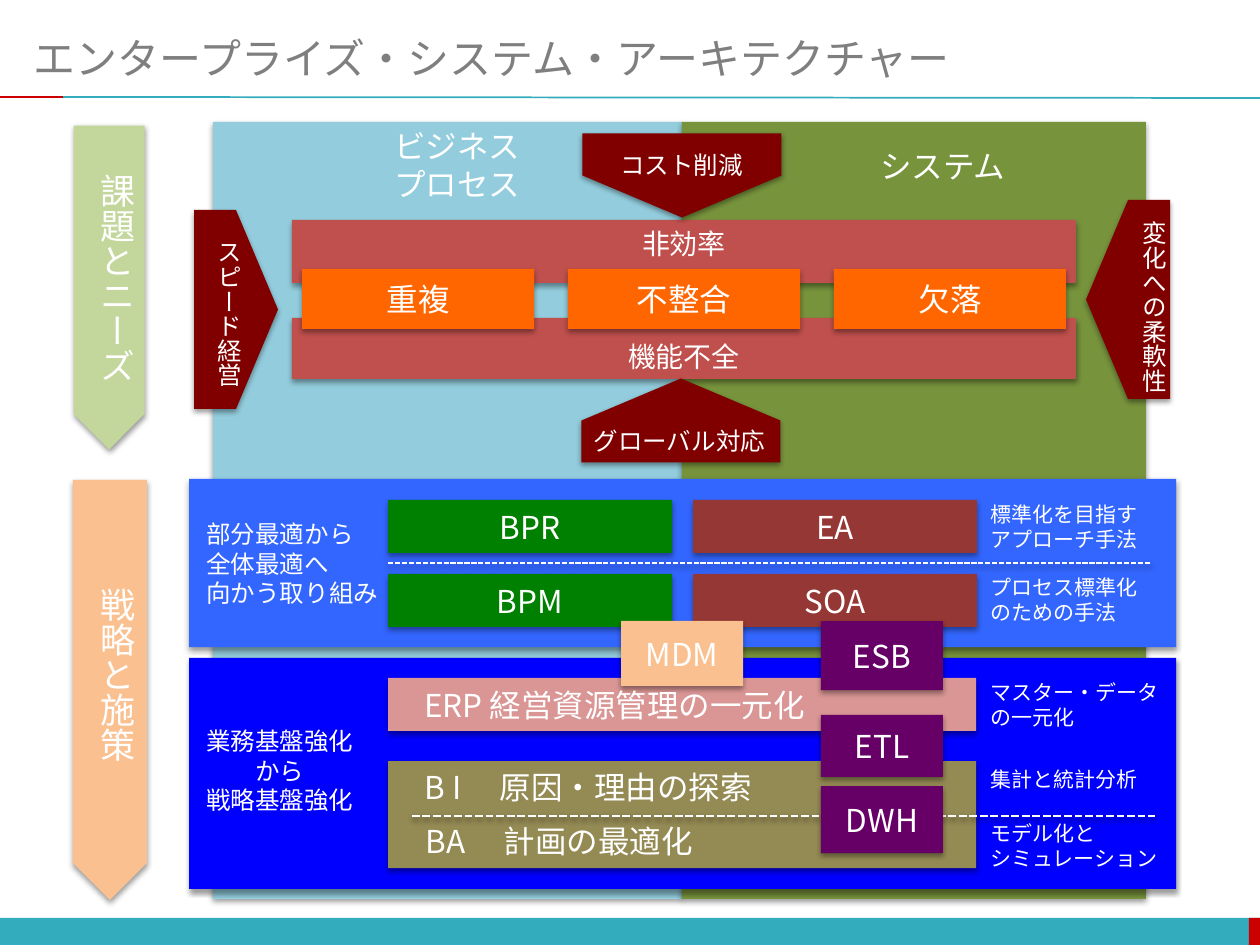
from pptx import Presentation
from pptx.dml.color import RGBColor
from pptx.enum.dml import MSO_LINE
from pptx.enum.shapes import MSO_CONNECTOR, MSO_SHAPE
from pptx.enum.text import MSO_ANCHOR, MSO_AUTO_SIZE, PP_ALIGN
from pptx.oxml import parse_xml
from pptx.oxml.ns import nsdecls, qn
from pptx.util import Pt

PX = 914400 / 126
FONT = "Noto Sans CJK JP"

RECT = MSO_SHAPE.RECTANGLE
BLOCK = MSO_SHAPE.ROUNDED_RECTANGLE
ARROW = MSO_SHAPE.PENTAGON
STRAIGHT = MSO_CONNECTOR.STRAIGHT
DASH = MSO_LINE.SQUARE_DOT
TOP, MIDDLE, BOTTOM = MSO_ANCHOR.TOP, MSO_ANCHOR.MIDDLE, MSO_ANCHOR.BOTTOM
LEFT, CENTER = PP_ALIGN.LEFT, PP_ALIGN.CENTER
FIT_SHAPE = MSO_AUTO_SIZE.SHAPE_TO_FIT_TEXT

WHITE = RGBColor(0xFF, 0xFF, 0xFF)
GRAY = RGBColor(0x7F, 0x7F, 0x7F)
TEAL = RGBColor(0x33, 0xAC, 0xBD)
RED = RGBColor(0xCC, 0x00, 0x00)
SKY = RGBColor(0x93, 0xCD, 0xDD)
OLIVE = RGBColor(0x77, 0x93, 0x3C)
AZURE = RGBColor(0x33, 0x66, 0xFF)
BLUE = RGBColor(0x00, 0x00, 0xFF)
GREEN = RGBColor(0x00, 0x80, 0x00)
BRICK = RGBColor(0x95, 0x37, 0x35)
PINK = RGBColor(0xD9, 0x96, 0x94)
KHAKI = RGBColor(0x94, 0x8A, 0x54)
PURPLE = RGBColor(0x66, 0x00, 0x66)
PEACH = RGBColor(0xFA, 0xC0, 0x90)
CORAL = RGBColor(0xC0, 0x50, 0x4D)
ORANGE = RGBColor(0xFF, 0x66, 0x00)
MAROON = RGBColor(0x80, 0x00, 0x00)
LIME = RGBColor(0xC3, 0xD6, 0x9B)

SHADOW = (
    f'<a:outerShdw {nsdecls("a")} blurRad="40000" dist="20000" dir="5400000" rotWithShape="0">'
    '<a:srgbClr val="000000"><a:alpha val="38000"/></a:srgbClr></a:outerShdw>'
)


def write_text(shape, lines, size, alignment):
    frame = shape.text_frame
    for index, line in enumerate(lines):
        paragraph = frame.add_paragraph() if index else frame.paragraphs[0]
        paragraph.alignment = alignment
        run = paragraph.add_run()
        run.text = line
        run.font.size = Pt(size)
        run.font.name = FONT
        run.font.color.rgb = WHITE
        east_asian = parse_xml(f'<a:ea {nsdecls("a")} typeface="{FONT}"/>')
        run.font._element.find(qn("a:latin")).addnext(east_asian)


def add_block(kind, box, color, text="", size=18, anchor=MIDDLE, shadow=True):
    shape = slide.shapes.add_shape(kind, *[round(value * PX) for value in box])
    shape.fill.solid()
    shape.fill.fore_color.rgb = color
    shape.line.fill.background()
    shape.shadow.inherit = False
    if shadow:
        shape._element.spPr.find(qn("a:effectLst")).append(parse_xml(SHADOW))
    if kind == BLOCK:
        shape.adjustments[0] = 0
    if text:
        shape.text_frame.vertical_anchor = anchor
        write_text(shape, [text], size, CENTER)
    return shape


presentation = Presentation()
presentation.slide_width = round(1260 * PX)
presentation.slide_height = round(945 * PX)
slide = presentation.slides.add_slide(presentation.slide_layouts[5])

title = slide.shapes.title
title.left, title.top, title.width, title.height = [
    round(value * PX) for value in (21, 21, 1218, 73)
]
title.text_frame.vertical_anchor = MIDDLE
paragraph = title.text_frame.paragraphs[0]
paragraph.alignment = LEFT
run = paragraph.add_run()
run.text = "エンタープライズ・システム・アーキテクチャー"
run.font.size = Pt(24)
run.font.name = "Calibri"
run.font.color.rgb = GRAY

add_block(RECT, (0, 918, 1260, 27), TEAL, shadow=False)
add_block(RECT, (1249, 918, 11, 27), RED, shadow=False)

for box, color in [
    ((213, 122, 469, 777), SKY),
    ((682, 122, 464, 777), OLIVE),
    ((189, 479, 987, 168), AZURE),
    ((189, 658, 987, 231), BLUE),
    ((388, 678, 588, 53), PINK),
    ((388, 761, 588, 107), KHAKI),
]:
    add_block(BLOCK, box, color)

for row, names in enumerate([("BPR", "EA"), ("BPM", "SOA")]):
    for column, (name, color) in enumerate(zip(names, (GREEN, BRICK))):
        add_block(BLOCK, (388 + 305 * column, 500 + 74 * row, 284, 53), color, name)

for start, end, color, width, dashed in [
    ((63, 97), (1260, 98), TEAL, 1, False),
    ((0, 97), (63, 97), RED, 1, False),
    ((388, 563), (1150, 563), WHITE, 1, True),
    ((412, 816), (1155, 816), WHITE, 1.5, True),
]:
    line = slide.shapes.add_connector(
        STRAIGHT, *[round(value * PX) for value in start + end]
    )
    line.line.color.rgb = color
    line.line.width = Pt(width)
    effects = parse_xml(f'<a:effectLst {nsdecls("a")}/>')
    if dashed:
        line.line.dash_style = DASH
        effects.append(parse_xml(SHADOW))
    line._element.spPr.append(effects)

for box, color, name in [
    ((821, 715, 122, 62), PURPLE, "ETL"),
    ((621, 621, 122, 65), PEACH, "MDM"),
    ((821, 621, 122, 69), PURPLE, "ESB"),
    ((821, 786, 122, 67), PURPLE, "DWH"),
]:
    add_block(BLOCK, box, color, name)

add_block(BLOCK, (292, 220, 784, 63), CORAL, "非効率", 16, TOP)
add_block(BLOCK, (292, 318, 784, 61), CORAL, "機能不全", 16, BOTTOM)
for column, problem in enumerate(["重複", "不整合", "欠落"]):
    add_block(BLOCK, (302 + 266 * column, 269, 232, 60), ORANGE, problem)

for box, color, rotation in [
    ((-100, 653, 420, 74), PEACH, 90),
    ((-53, 252, 324, 71), LIME, 90),
    ((640, 76, 84, 199), MAROON, 90),
    ((194, 210, 84, 199), MAROON, 0),
    ((1086, 200, 84, 199), MAROON, 180),
    ((639, 321, 84, 199), MAROON, 270),
]:
    add_block(ARROW, box, color).rotation = rotation

for box, lines, size, alignment, vertical in [
    ((194, 513, 199, 102), ["部分最適から", "全体最適へ", "向かう取り組み"], 14, LEFT, False),
    ((193, 720, 174, 102), ["業務基盤強化", "から", "戦略基盤強化"], 14, CENTER, False),
    ((978, 495, 174, 63), ["標準化を目指す", "アプローチ手法"], 12, LEFT, False),
    ((978, 568, 174, 63), ["プロセス標準化", "のための手法"], 12, LEFT, False),
    ((978, 673, 195, 63), ["マスター・データ", "の一元化"], 12, LEFT, False),
    ((978, 760, 174, 38), ["集計と統計分析"], 12, LEFT, False),
    ((978, 814, 195, 63), ["モデル化と", "シミュレーション"], 12, LEFT, False),
    ((412, 680, 415, 50), ["ERP 経営資源管理の一元化"], 18, LEFT, False),
    ((412, 762, 368, 50), ["B I　 原因・理由の探索"], 18, LEFT, False),
    ((413, 816, 302, 50), ["BA　 計画の最適化"], 18, LEFT, False),
    ((76, 575, 68, 189), ["戦略と施策"], 20, CENTER, True),
    ((76, 161, 68, 224), ["課題とニーズ"], 20, CENTER, True),
    ((195, 228, 55, 161), ["スピード経営"], 14, CENTER, True),
    ((1120, 209, 55, 186), ["変化への柔軟性"], 14, CENTER, True),
    ((607, 144, 149, 43), ["コスト削減"], 14, CENTER, False),
    ((580, 420, 199, 43), ["グローバル対応"], 14, CENTER, False),
    ((868, 141, 152, 50), ["システム"], 18, LEFT, False),
    ((382, 121, 152, 89), ["ビジネス", "プロセス"], 18, LEFT, False),
]:
    label = slide.shapes.add_textbox(*[round(value * PX) for value in box])
    label.text_frame.word_wrap = False
    label.text_frame.auto_size = FIT_SHAPE
    if vertical:
        label.text_frame._txBody.bodyPr.set("vert", "eaVert")
    write_text(label, lines, size, alignment)

presentation.save("out.pptx")
